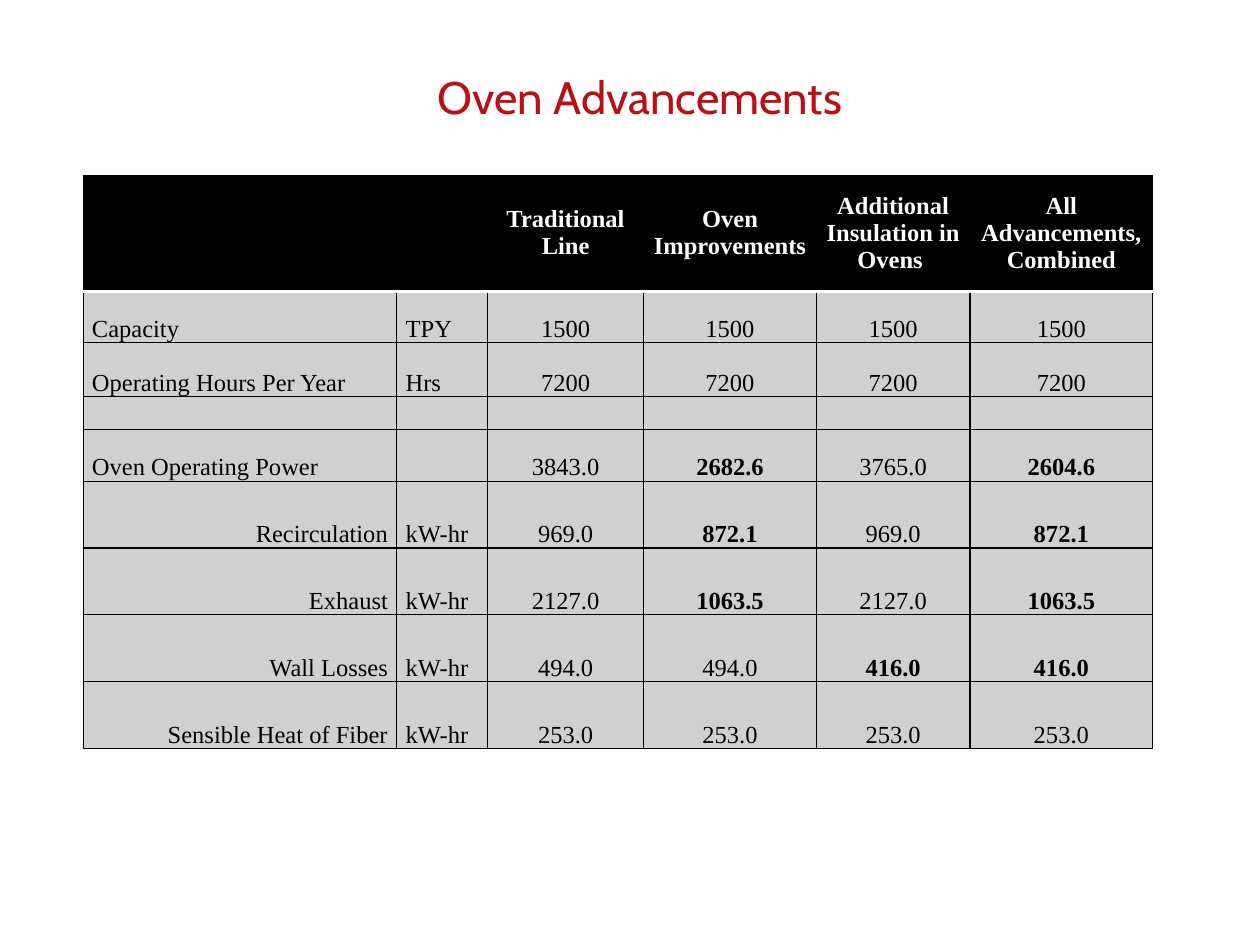
from lxml.etree import SubElement
from pptx import Presentation
from pptx.dml.color import RGBColor
from pptx.enum.text import MSO_ANCHOR, PP_ALIGN
from pptx.oxml.ns import qn
from pptx.util import Inches, Pt

TITLE = "Oven Advancements"
HEADER = ["", "", "Traditional Line", "Oven Improvements",
          "Additional Insulation in Ovens ", "All Advancements, Combined"]
ROWS = [
    ["Capacity", "TPY", "1500", "1500", "1500", "1500"],
    ["Operating Hours Per Year", "Hrs", "7200", "7200", "7200", "7200"],
    ["", "", "", "", "", ""],
    ["Oven Operating Power", "", "3843.0", "2682.6", "3765.0", "2604.6"],
    ["Recirculation", "kW-hr", "969.0", "872.1", "969.0", "872.1"],
    ["Exhaust", "kW-hr", "2127.0", "1063.5", "2127.0", "1063.5"],
    ["Wall Losses", "kW-hr", "494.0", "494.0", "416.0", "416.0"],
    ["Sensible Heat of Fiber", "kW-hr", "253.0", "253.0", "253.0", "253.0"],
]
IMPROVED = {"2682.6", "2604.6", "872.1", "1063.5", "416.0"}
FIRST_COMPONENT_ROW = 5
COLUMN_WIDTHS = [2.49, 0.72, 1.24, 1.37, 1.22, 1.45]
ROW_HEIGHTS = [0.92, 0.41, 0.43, 0.26, 0.41] + [0.53] * 4
THEME = {
    "title_font": "Cabin", "title_size": 26, "title_color": "B71017",
    "table_font": "Times New Roman", "table_size": 14,
    "dark": "000000", "light": "FFFFFF", "body_fill": "D0D0D0",
    "grid_width": 0.75, "rule_width": 2,
}


def write_text(frame, text, *, font, size, color, bold=False,
               align=PP_ALIGN.LEFT, line_spacing=None):
    para = frame.paragraphs[0]
    para.alignment = align
    para.line_spacing = line_spacing
    if not text:
        SubElement(para._p, qn("a:endParaRPr"), sz=str(size * 100))
        return
    span = para.add_run()
    span.text = text
    span.font.name = font
    span.font.size = Pt(size)
    span.font.bold = bold
    span.font.color.rgb = RGBColor.from_string(color)


def draw_borders(cell, row):
    properties = cell._tc.get_or_add_tcPr()
    rule_side = {0: "lnB", 1: "lnT"}.get(row)
    for side in ("lnL", "lnR", "lnT", "lnB"):
        is_rule = side == rule_side
        width = THEME["rule_width" if is_rule else "grid_width"]
        color = THEME["light" if is_rule else "dark"]
        line = SubElement(properties, qn(f"a:{side}"), w=str(Pt(width)))
        fill = SubElement(line, qn("a:solidFill"))
        SubElement(fill, qn("a:srgbClr"), val=color)


def cell_alignment(row, column):
    if row == 0 or column >= 2:
        return PP_ALIGN.CENTER
    if column == 0 and row >= FIRST_COMPONENT_ROW:
        return PP_ALIGN.RIGHT
    return PP_ALIGN.LEFT


def format_cell(cell, text, row, column):
    is_header = row == 0
    cell.margin_left = cell.margin_right = Inches(0.07)
    cell.margin_top = cell.margin_bottom = 0
    cell.vertical_anchor = MSO_ANCHOR.MIDDLE if is_header else MSO_ANCHOR.BOTTOM
    draw_borders(cell, row)
    cell.fill.solid()
    cell.fill.fore_color.rgb = RGBColor.from_string(
        THEME["dark" if is_header else "body_fill"])
    write_text(cell.text_frame, text, font=THEME["table_font"],
               size=THEME["table_size"],
               color=THEME["light" if is_header else "dark"],
               bold=is_header or text in IMPROVED,
               align=cell_alignment(row, column))


def add_title(page):
    box = page.shapes.add_textbox(Inches(3.3), Inches(0.55), Inches(3.56), Inches(0.49))
    box.text_frame.word_wrap = False
    write_text(box.text_frame, TITLE, font=THEME["title_font"],
               size=THEME["title_size"], color=THEME["title_color"],
               align=PP_ALIGN.CENTER, line_spacing=0.9)


def add_comparison(page):
    content = [HEADER] + ROWS
    table = page.shapes.add_table(
        len(content), len(HEADER), Inches(0.66), Inches(1.39),
        Inches(sum(COLUMN_WIDTHS)), Inches(sum(ROW_HEIGHTS))).table
    for column, width in zip(table.columns, COLUMN_WIDTHS):
        column.width = Inches(width)
    for row, height in zip(table.rows, ROW_HEIGHTS):
        row.height = Inches(height)
    for row, values in enumerate(content):
        for column, text in enumerate(values):
            format_cell(table.cell(row, column), text, row, column)


def main():
    deck = Presentation()
    deck.slide_width, deck.slide_height = Inches(10), Inches(7.5)
    page = deck.slides.add_slide(deck.slide_layouts[6])
    add_title(page)
    add_comparison(page)
    deck.save("out.pptx")


if __name__ == "__main__":
    main()
